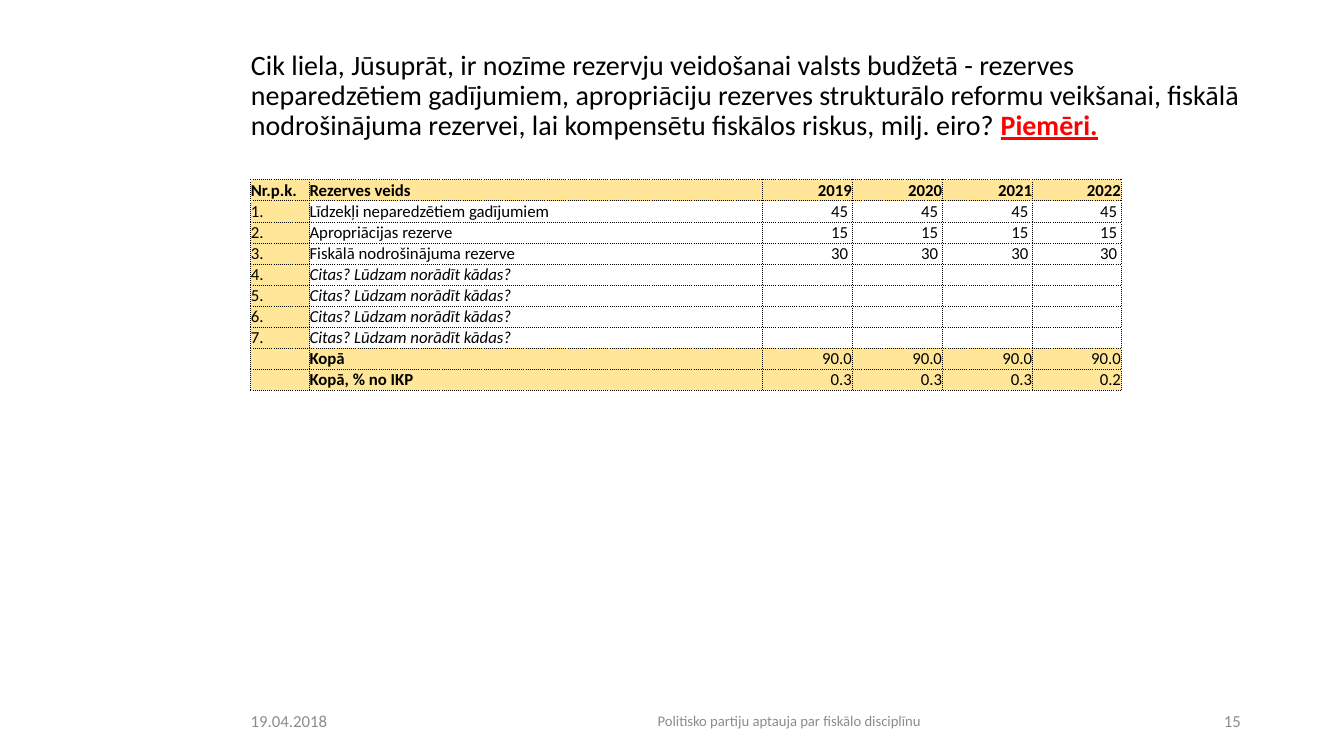
from dataclasses import dataclass

from lxml import etree
from pptx import Presentation
from pptx import util as u
from pptx.dml.color import RGBColor
from pptx.enum import text
from pptx.oxml import ns


@dataclass(frozen=True)
class Theme:
    font: str = "Calibri"
    ink: RGBColor = RGBColor(0, 0, 0)
    accent: RGBColor = RGBColor(255, 0, 0)
    muted: RGBColor = RGBColor(0x8C, 0x8C, 0x8C)
    highlight: RGBColor = RGBColor(0xFF, 0xE6, 0x99)
    title_size: float = 20
    body_size: float = 12
    footer_size: float = 10.5


@dataclass(frozen=True)
class Reserve:
    number: str
    name: str
    amounts: tuple[str, ...] = ("",) * 4
    bold: bool = False
    italic: bool = False
    bold_amounts: bool = False
    highlighted: bool = False
    anchor: text.MSO_ANCHOR = text.MSO_ANCHOR.MIDDLE


@dataclass(frozen=True)
class FooterItem:
    wording: str
    left: float
    width: float
    size: float
    alignment: text.PP_ALIGN


THEME = Theme()
OTHER = "Citas? Lūdzam norādīt kādas?"
RESERVES = [
    Reserve("Nr.p.k.", "Rezerves veids", ("2019", "2020", "2021", "2022"), bold=True,
            bold_amounts=True, highlighted=True, anchor=text.MSO_ANCHOR.BOTTOM),
    Reserve("1.", "Līdzekļi neparedzētiem gadījumiem", ("45 ",) * 4),
    Reserve("2.", "Apropriācijas rezerve", ("15 ",) * 4),
    Reserve("3.", "Fiskālā nodrošinājuma rezerve", ("30 ",) * 4),
    *(Reserve(f"{number}.", OTHER, italic=True) for number in range(4, 8)),
    Reserve("", "Kopā", ("90.0",) * 4, bold=True, highlighted=True),
    Reserve("", "Kopā, % no IKP", ("0.3", "0.3", "0.3", "0.2"), bold=True, highlighted=True),
]
COLUMN_WIDTHS = (1.48, 11.4, 2.27, 2.27, 2.27, 2.24)
ROW_HEIGHT = 0.53
FOOTER = [
    FooterItem("19.04.2018", 6.07, 4.17, THEME.body_size, text.PP_ALIGN.LEFT),
    FooterItem("Politisko partiju aptauja par fiskālo disciplīnu", 10.95, 17.88,
               THEME.footer_size, text.PP_ALIGN.CENTER),
    FooterItem("15", 29.51, 2.01, THEME.body_size, text.PP_ALIGN.RIGHT),
]


def set_font(font, size: float, color: RGBColor, bold: bool = False, italic: bool = False) -> None:
    font.name = THEME.font
    font.size = u.Pt(size)
    font.color.rgb = color
    font.bold = bold
    font.italic = italic


def add_title(slide) -> None:
    title = slide.shapes.title
    title.left, title.top = u.Cm(6.07), u.Cm(1.02)
    title.width, title.height = u.Cm(25.45), u.Cm(2.82)
    frame = title.text_frame
    frame.word_wrap = True
    frame.auto_size = text.MSO_AUTO_SIZE.NONE
    frame.vertical_anchor = text.MSO_ANCHOR.MIDDLE
    paragraph = frame.paragraphs[0]
    paragraph.alignment = text.PP_ALIGN.LEFT
    paragraph.line_spacing = 0.9
    question = paragraph.add_run()
    question.text = (
        "Cik liela, Jūsuprāt, ir nozīme rezervju veidošanai valsts budžetā - rezerves "
        "neparedzētiem gadījumiem, apropriāciju rezerves strukturālo reformu veikšanai, "
        "fiskālā nodrošinājuma rezervei, lai kompensētu fiskālos riskus, milj. eiro? "
    )
    set_font(question.font, THEME.title_size, THEME.ink)
    example = paragraph.add_run()
    example.text = "Piemēri."
    set_font(example.font, THEME.title_size, THEME.accent, bold=True)
    example.font.underline = True


def add_dotted_borders(cell) -> None:
    properties = cell._tc.get_or_add_tcPr()
    for side in ("lnL", "lnR", "lnT", "lnB"):
        line = etree.SubElement(properties, ns.qn(f"a:{side}"), w=str(u.Pt(0.5)))
        fill = etree.SubElement(line, ns.qn("a:solidFill"))
        etree.SubElement(fill, ns.qn("a:srgbClr"), val=str(THEME.ink))
        etree.SubElement(line, ns.qn("a:prstDash"), val="sysDot")


def fill_cell(cell, wording: str, reserve: Reserve, column: int) -> None:
    cell.margin_left = cell.margin_right = cell.margin_top = cell.margin_bottom = 0
    cell.vertical_anchor = reserve.anchor
    add_dotted_borders(cell)
    if reserve.highlighted or column == 0:
        cell.fill.solid()
        cell.fill.fore_color.rgb = THEME.highlight
    else:
        cell.fill.background()
    paragraph = cell.text_frame.paragraphs[0]
    paragraph.alignment = text.PP_ALIGN.RIGHT if column > 1 else text.PP_ALIGN.LEFT
    bold = reserve.bold_amounts if column > 1 else reserve.bold
    set_font(paragraph.font, THEME.body_size, THEME.ink, bold, reserve.italic and column == 1)
    if wording:
        paragraph.add_run().text = wording
    else:
        etree.SubElement(paragraph._p, ns.qn("a:endParaRPr"), sz=str(THEME.body_size * 100))


def add_reserve_table(slide) -> None:
    table = slide.shapes.add_table(
        len(RESERVES), len(COLUMN_WIDTHS), u.Cm(6.32), u.Cm(4.53),
        u.Cm(sum(COLUMN_WIDTHS)), u.Cm(ROW_HEIGHT * len(RESERVES)),
    ).table
    table.first_row = table.horz_banding = False
    for column, width in zip(table.columns, COLUMN_WIDTHS):
        column.width = u.Cm(width)
    for row, reserve in zip(table.rows, RESERVES):
        row.height = u.Cm(ROW_HEIGHT)
        wordings = (reserve.number, reserve.name, *reserve.amounts)
        for column, (cell, wording) in enumerate(zip(row.cells, wordings)):
            fill_cell(cell, wording, reserve, column)


def add_footer_item(slide, item: FooterItem) -> None:
    box = slide.shapes.add_textbox(u.Cm(item.left), u.Cm(17.65), u.Cm(item.width), u.Cm(1.01))
    frame = box.text_frame
    frame.word_wrap = True
    frame.vertical_anchor = text.MSO_ANCHOR.MIDDLE
    paragraph = frame.paragraphs[0]
    paragraph.text = item.wording
    paragraph.alignment = item.alignment
    set_font(paragraph.font, item.size, THEME.muted)


def main() -> None:
    presentation = Presentation()
    presentation.slide_width = u.Cm(33.87)
    presentation.slide_height = u.Cm(19.05)
    slide = presentation.slides.add_slide(presentation.slide_layouts.get_by_name("Title Only"))
    add_title(slide)
    add_reserve_table(slide)
    for item in FOOTER:
        add_footer_item(slide, item)
    presentation.save("out.pptx")


if __name__ == "__main__":
    main()
